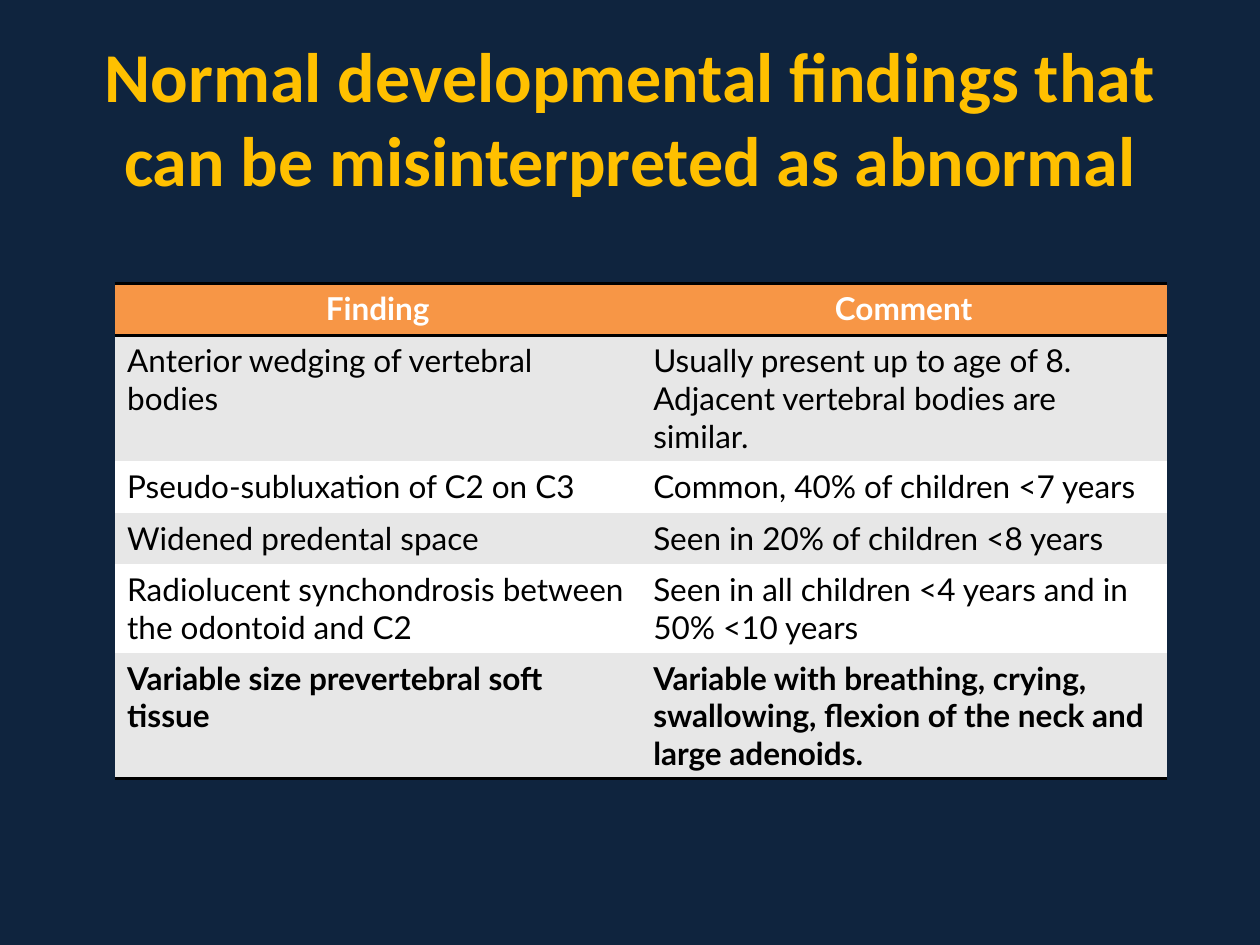
import pptx
import pptx.dml.color
import pptx.enum.text
import pptx.oxml.ns
import pptx.util
from lxml import etree

Inches = pptx.util.Inches
Pt = pptx.util.Pt
RGBColor = pptx.dml.color.RGBColor
PP_ALIGN = pptx.enum.text.PP_ALIGN

TITLE = "Normal developmental findings that can be misinterpreted as abnormal"
ROWS = [
    ("Finding", "Comment"),
    ("Anterior wedging of vertebral bodies",
     "Usually present up to age of 8. Adjacent vertebral bodies are similar."),
    ("Pseudo-subluxation of C2 on C3", "Common, 40% of children <7 years"),
    ("Widened predental space", "Seen in 20% of children <8 years"),
    ("Radiolucent synchondrosis between the odontoid and C2",
     "Seen in all children <4 years and in 50% <10 years"),
    ("Variable size prevertebral soft tissue",
     "Variable with breathing, crying, swallowing, flexion of the neck and large adenoids."),
]
LAST = len(ROWS) - 1

NAVY = RGBColor(0x0F, 0x24, 0x3E)
GOLD = RGBColor(0xFF, 0xC0, 0x00)
ORANGE = RGBColor(0xF7, 0x96, 0x46)
GRAY = RGBColor(0xE7, 0xE7, 0xE7)
WHITE = RGBColor(0xFF, 0xFF, 0xFF)
BLACK = RGBColor(0x00, 0x00, 0x00)


def set_font(p, name, size, color, bold):
    p.font.name = name
    p.font.size = Pt(size)
    p.font.color.rgb = color
    p.font.bold = bold


def set_borders(cell, ruled):
    qn = pptx.oxml.ns.qn
    tc_pr = cell._tc.get_or_add_tcPr()
    for i, side in enumerate("LRTB"):
        ln = etree.Element(qn(f"a:ln{side}"))
        if side in ruled:
            ln.set("w", str(Pt(2)))
            fill = etree.SubElement(ln, qn("a:solidFill"))
            etree.SubElement(fill, qn("a:srgbClr"), val=str(BLACK))
        else:
            etree.SubElement(ln, qn("a:noFill"))
        tc_pr.insert(i, ln)


prs = pptx.Presentation()
prs.slide_width, prs.slide_height = Inches(10), Inches(7.5)
slide = prs.slides.add_slide(prs.slide_layouts[5])
slide.background.fill.solid()
slide.background.fill.fore_color.rgb = NAVY

title = slide.shapes.title
title.left, title.top = Inches(0.5), Inches(0.3)
title.width, title.height = Inches(9), Inches(1.25)
tf = title.text_frame
tf.text = TITLE
tf.word_wrap = True
tf.vertical_anchor = pptx.enum.text.MSO_ANCHOR.MIDDLE
p = tf.paragraphs[0]
p.alignment = PP_ALIGN.CENTER
set_font(p, "Calibri", 40, GOLD, True)

table = slide.shapes.add_table(len(ROWS), 2, Inches(0.91), Inches(2.25),
                               Inches(8.35), Inches(0.41 * len(ROWS))).table

for i, row in enumerate(ROWS):
    header = i == 0
    color = ORANGE if header else GRAY if i % 2 else WHITE
    ruled = ("T" if i in (0, 1) else "") + ("B" if i in (0, LAST) else "")
    for j, text in enumerate(row):
        cell = table.cell(i, j)
        cell.text = text
        cell.fill.solid()
        cell.fill.fore_color.rgb = color
        set_borders(cell, ruled)
        p = cell.text_frame.paragraphs[0]
        p.alignment = PP_ALIGN.CENTER if header else PP_ALIGN.LEFT
        set_font(p, "Lato", 18, WHITE if header else BLACK, i in (0, LAST))

prs.save("out.pptx")
